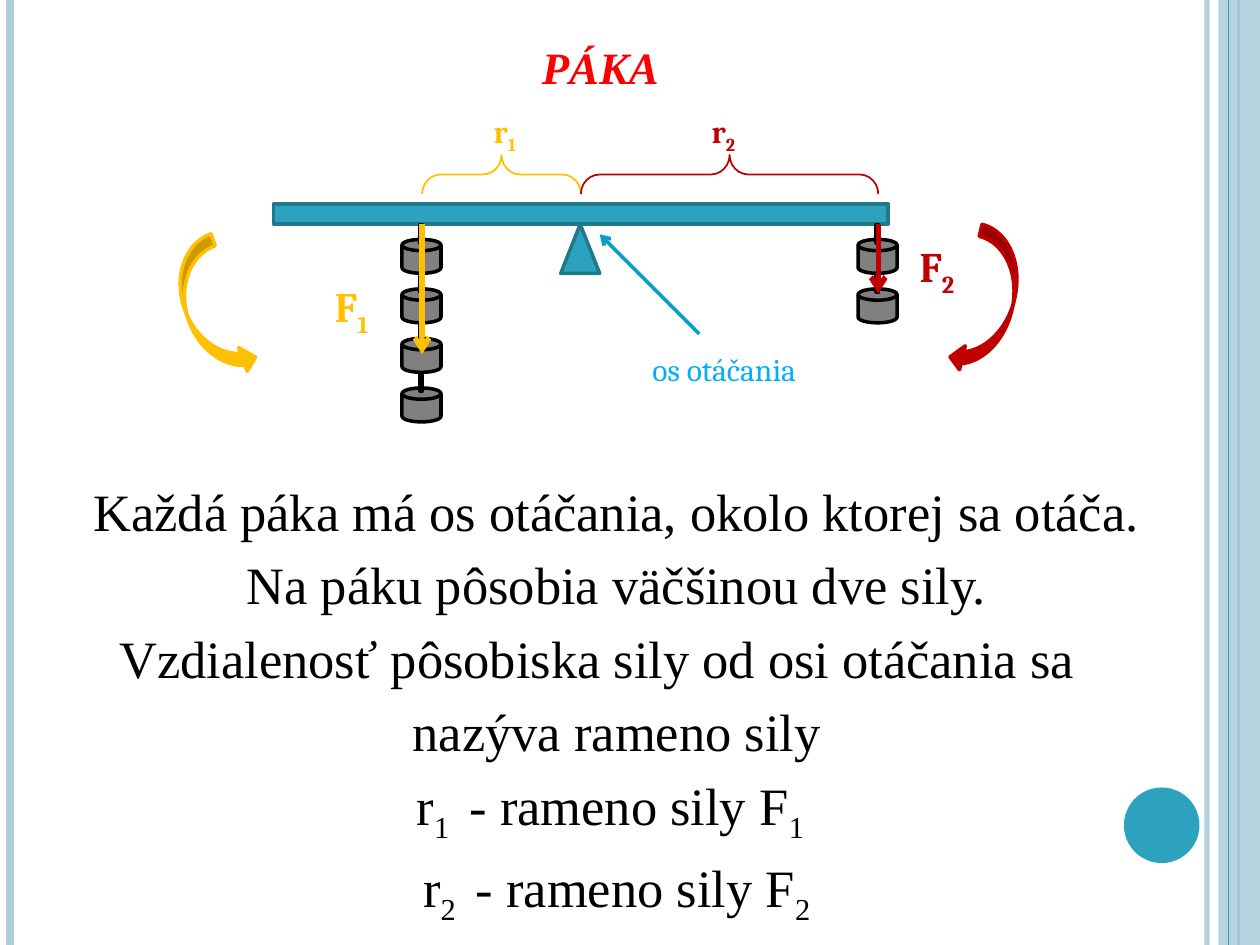
from lxml import etree
from pptx import Presentation
from pptx.dml.color import RGBColor
from pptx.enum import shapes, text
from pptx.oxml.ns import qn
from pptx.util import Inches, Pt

SHAPE = shapes.MSO_SHAPE
TEAL, PALE, EDGE = "2DA2BF", "ADCEDC", "21788D"
YELLOW, RED, BLACK, GRAY = "FFC000", "C00000", "000000", "808080"


def rgb(color):
    return RGBColor.from_string(color)


def set_alpha(element, percent):
    for clr in element.iter(qn("a:srgbClr")):
        etree.SubElement(clr, qn("a:alpha"), val=str(percent * 1000))


def add_shape(parent, kind, x, y, w, h, fill=None, line=None, width=2, rotation=0):
    sp = parent.add_shape(kind, Inches(x), Inches(y), Inches(w), Inches(h))
    sp.shadow.inherit = False
    sp.rotation = rotation
    if fill:
        sp.fill.solid()
        sp.fill.fore_color.rgb = rgb(fill)
    else:
        sp.fill.background()
    if line:
        sp.line.color.rgb = rgb(line)
        sp.line.width = Pt(width)
    else:
        sp.line.fill.background()
    return sp


def add_line(parent, x1, y1, x2, y2, color, width, arrow=False):
    line = parent.add_connector(shapes.MSO_CONNECTOR.STRAIGHT,
                                Inches(x1), Inches(y1), Inches(x2), Inches(y2))
    line.line.color.rgb = rgb(color)
    line.line.width = Pt(width)
    if arrow:
        ln = line._element.spPr.find(qn("a:ln"))
        etree.SubElement(ln, qn("a:tailEnd"), type="arrow")
    etree.SubElement(line._element.spPr, qn("a:effectLst"))
    return line


def add_runs(p, parts, gap=0):
    """Add the parts as runs; every second one is a subscript, followed by a gap in points."""
    for i, part in enumerate(parts):
        r = p.add_run()
        r.text = part
        if i % 2:
            rPr = r.font._element
            rPr.set("baseline", "-25000")
            if gap and i < len(parts) - 1:
                rPr.set("spc", str(gap * 100))


def style(p, font, size, color, bold=False):
    p.font.name, p.font.size, p.font.bold = font, Pt(size), bold
    p.font.color.rgb = rgb(color)


def add_label(parent, x, y, w, h, parts, size, color, bold=True):
    tf = parent.add_textbox(Inches(x), Inches(y), Inches(w), Inches(h)).text_frame
    tf.word_wrap = True
    p = tf.paragraphs[0]
    add_runs(p, parts)
    style(p, "Cambria", size, color, bold)


def place(sp, x, y, w, h):
    sp.left, sp.top, sp.width, sp.height = map(Inches, (x, y, w, h))


def add_frame(parent, w, h):
    """Stripes along the slide edges and the disc at the lower right."""
    stripe = add_line(parent, w - 0.42, 0, w - 0.42, h, PALE, 3)
    set_alpha(stripe._element, 93)
    add_line(parent, 0.08, 0, 0.08, h, PALE, 4.5)
    add_line(parent, w - 0.17, 0, w - 0.17, h, TEAL, 1.5)
    band = add_shape(parent, SHAPE.RECTANGLE, w - 0.33, 0, 0.33, h, PALE)
    set_alpha(band._element, 87)
    add_line(parent, w - 0.25, 0, w - 0.25, h, TEAL, 0.75)
    add_shape(parent, SHAPE.OVAL, w - 1.08, h - 1.25, 0.6, 0.6, TEAL)


def fill_title(title, x, y, w, h):
    place(title, x, y, w, h)
    tf = title.text_frame
    tf.vertical_anchor = text.MSO_ANCHOR.BOTTOM
    tf.auto_size = text.MSO_AUTO_SIZE.NONE
    p = tf.paragraphs[0]
    p.alignment = text.PP_ALIGN.CENTER
    r = p.add_run()
    r.text = "páka"
    r.font._element.set("cap", "small")
    style(p, "Times New Roman", 32, "FF0000", True)
    p.font.italic = True


def fill_body(body, x, y, w, h):
    place(body, x, y, w, h)
    tf = body.text_frame
    tf.auto_size = text.MSO_AUTO_SIZE.NONE
    lines = [  # right margin, parts
        (0, ["Každá páka má os otáčania, okolo ktorej sa otáča."]),
        (0, ["Na páku pôsobia väčšinou dve sily."]),
        (0.31, ["Vzdialenosť pôsobiska sily od osi otáčania sa"]),
        (0, ["nazýva rameno sily"]),
        (0.1, ["r", "1", " - rameno sily F", "1"]),
        (0, ["r", "2", " - rameno sily F", "2"]),
    ]
    for i, (margin, parts) in enumerate(lines):
        p = tf.paragraphs[0] if i == 0 else tf.add_paragraph()
        add_runs(p, parts, gap=4)
        style(p, "Times New Roman", 30, BLACK)
        p.alignment = text.PP_ALIGN.CENTER
        p.space_before = Pt(6)
        pPr = p._p.get_or_add_pPr()
        for name, value in (("marL", 0), ("marR", margin), ("indent", 0)):
            pPr.set(name, str(Inches(value)))
        # a:buNone has to stand before a:defRPr
        pPr.find(qn("a:defRPr")).addprevious(etree.Element(qn("a:buNone")))


def add_load(parent, x, y, count, force, color):
    """Chain of weights hanging from (x, y), with its force arrow."""
    for i in range(count):
        top = y + i * 0.393
        add_shape(parent, SHAPE.FLOWCHART_MAGNETIC_DISK, x - 0.16, top + 0.12,
                  0.31, 0.27, GRAY, BLACK)
        add_shape(parent, SHAPE.RECTANGLE, x - 0.02, top, 0.02, 0.15, BLACK, BLACK)
    add_line(parent, x, y, x, y + force, color, 3, True)


def add_arm(parent, x1, x2, y, name_x, name, color):
    """Brace over the arm from x1 to x2, with its name above."""
    depth, length = 0.31, x2 - x1
    brace = add_shape(parent, SHAPE.LEFT_BRACE, (x1 + x2 - depth) / 2,
                      y + (depth - length) / 2, depth, length, None, color, 1, 90)
    brace.adjustments[0] = 0.48
    add_label(parent, name_x, y - 0.39, 0.47, 0.4, name, 18, color)


def add_lever(parent, x, y, w, h):
    """Lever whose beam fills the given box."""
    pivot, under = x + w / 2, y + h
    left, right = pivot - 1.26, pivot + 2.36
    add_shape(parent, SHAPE.RECTANGLE, x, y, w, h, TEAL, EDGE)
    add_shape(parent, SHAPE.ISOSCELES_TRIANGLE, pivot - 0.16, under, 0.31, 0.39, TEAL, EDGE)
    add_load(parent, left, under, 4, 1.03, YELLOW)
    add_load(parent, right, under, 2, 0.55, RED)
    add_label(parent, left - 0.79, under + 0.4, 0.72, 0.5, ["F", "1"], 24, YELLOW)
    add_label(parent, right + 0.23, under + 0.08, 0.84, 0.5, ["F", "2"], 24, RED)
    add_line(parent, pivot + 0.94, under + 0.87, pivot + 0.15, under + 0.08, "079EC3", 2, True)
    add_label(parent, pivot + 0.47, under + 0.95, 1.73, 0.4, ["os otáčania"], 18, "00B0F0", False)
    add_arm(parent, left, pivot, y - 0.39, pivot - 0.79, ["r", "1"], YELLOW)
    add_arm(parent, pivot, right, y - 0.39, pivot + 0.94, ["r", "2"], RED)
    add_shape(parent, SHAPE.CURVED_RIGHT_ARROW, x - 0.69, y + 0.27, 0.4, 1.14,
              YELLOW, YELLOW, rotation=340.1)
    add_shape(parent, SHAPE.CURVED_LEFT_ARROW, x + w + 0.6, y + 0.19, 0.39, 1.18,
              RED, RED, rotation=13.6)


def main():
    prs = Presentation()
    prs.slide_width, prs.slide_height = Inches(10), Inches(7.5)
    s = prs.slides.add_slide(prs.slide_layouts[1])
    add_frame(s.shapes, 10, 7.5)
    fill_title(s.shapes.title, 0.68, 0.27, 8.17, 0.54)
    fill_body(s.placeholders[1], 0.31, 3.75, 9.17, 3.99)
    add_lever(s.shapes.add_group_shape().shapes, 2.17, 1.62, 4.88, 0.16)
    prs.save("out.pptx")


if __name__ == "__main__":
    main()
